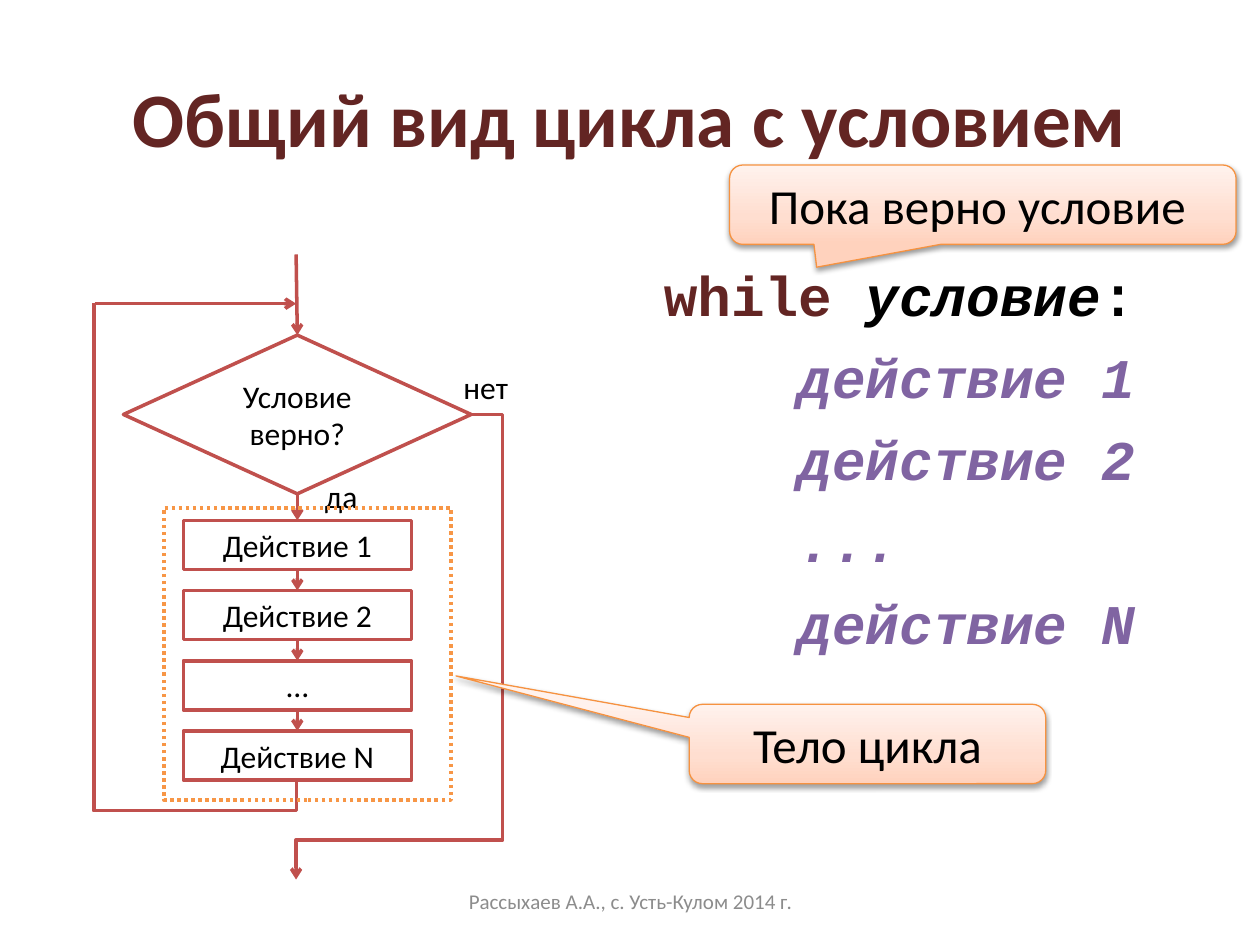
"""Builds a slide that explains the general form of a while loop."""
from lxml import etree
from pptx import Presentation
from pptx.dml.color import RGBColor
from pptx.enum import dml, shapes, text
from pptx.oxml.ns import qn
from pptx.util import Inches, Pt

COLORS = {
    "maroon": "632523", "red": "C0504D", "orange": "F79646", "edge": "F69240",
    "purple": "8064A2", "gray": "8C8C8C", "black": "000000", "white": "FFFFFF",
}
GRADIENT = [(0, "FFD2BD"), (35, "FFDED0"), (100, "FFF2ED")]
SHAPE = shapes.MSO_SHAPE
CENTER = text.PP_ALIGN.CENTER
MIDDLE = text.MSO_ANCHOR.MIDDLE

TITLE = "Общий вид цикла с условием"
FOOTER = "Рассыхаев А.А., с. Усть-Кулом 2014 г."
QUESTION = "Условие верно?"
ACTIONS = ["Действие 1", "Действие 2", "…", "Действие N"]
BRANCHES = [("да", 2.48, 3.74), ("нет", 3.58, 2.87)]
CODE_HEAD = [("while ", "maroon", False), ("условие", "black", True), (":", "black", False)]
CODE_BODY = ["действие 1", "действие 2", "...", "действие N"]
CALLOUTS = [
    ("Пока верно условие ", (5.79, 1.31, 4.02, 0.63), (-0.328, 0.788, 0.167)),
    ("Тело цикла", (5.47, 5.59, 2.83, 0.63), (-1.154, -0.858, 0.167)),
]

AXIS, ACTION_TOP, ACTION_STEP = 2.36, 4.13, 0.557
ACTION_WIDTH, ACTION_HEIGHT = 1.81, 0.39
CODE_INDENT = 1.07


def color(name):
    return RGBColor.from_string(COLORS[name])


def add_node(parent, tag, **attributes):
    node = etree.SubElement(parent, qn(tag))
    for key, value in attributes.items():
        node.set(key, str(value))
    return node


def add_span(para, words, size, ink="black", font="Calibri", bold=False, italic=False):
    span = para.add_run()
    span.text = words
    span.font.size = Pt(size)
    span.font.name = font
    span.font.bold = bold
    span.font.italic = italic
    span.font.color.rgb = color(ink)


def add_text(page, place, anchor=text.MSO_ANCHOR.TOP):
    frame = page.shapes.add_textbox(*map(Inches, place)).text_frame
    frame.word_wrap = True
    frame.vertical_anchor = anchor
    return frame


def add_centered(frame, words, size, **style):
    frame.vertical_anchor = MIDDLE
    para = frame.paragraphs[0]
    para.alignment = CENTER
    add_span(para, words, size, **style)


def add_box(page, kind, place, edge="red", width=2):
    box = page.shapes.add_shape(kind, *map(Inches, place))
    box.shadow.inherit = False
    box.line.color.rgb = color(edge)
    box.line.width = Pt(width)
    return box


def add_step(page, kind, place, words):
    box = add_box(page, kind, place)
    box.fill.solid()
    box.fill.fore_color.rgb = color("white")
    add_centered(box.text_frame, words, 18)


def add_link(page, begin, end, arrow=True, bend=None, adjust=(), turn=0):
    kind = shapes.MSO_CONNECTOR.ELBOW if bend else shapes.MSO_CONNECTOR.STRAIGHT
    link = page.shapes.add_connector(kind, *map(Inches, begin + end))
    link.line.color.rgb = color("red")
    link.line.width = Pt(2)
    properties = link._element.spPr
    if arrow:
        add_node(properties.find(qn("a:ln")), "a:tailEnd", type="arrow")
    add_node(properties, "a:effectLst")
    if bend:
        geometry = properties.find(qn("a:prstGeom"))
        geometry.set("prst", bend)
        guides = geometry.find(qn("a:avLst"))
        for number, share in enumerate(adjust, 1):
            add_node(guides, "a:gd", name=f"adj{number}", fmla=f"val {round(share * 100000)}")
    if turn:
        properties.find(qn("a:xfrm")).set("rot", str(turn * 60000))


def add_callout(page, words, place, adjust):
    box = add_box(page, SHAPE.ROUNDED_RECTANGULAR_CALLOUT, place, "edge", 0.75)
    for number, value in enumerate(adjust):
        box.adjustments[number] = value
    properties = box._element.spPr
    gradient = etree.Element(qn("a:gradFill"), rotWithShape="1")
    stops = add_node(gradient, "a:gsLst")
    for position, tint in GRADIENT:
        add_node(add_node(stops, "a:gs", pos=position * 1000), "a:srgbClr", val=tint)
    add_node(gradient, "a:lin", ang=270 * 60000, scaled=0)
    properties.find(qn("a:ln")).addprevious(gradient)
    shadow = add_node(properties.find(qn("a:effectLst")), "a:outerShdw", blurRad=Pt(3.1),
                      dist=Pt(1.6), dir=90 * 60000, rotWithShape=0)
    add_node(add_node(shadow, "a:srgbClr", val=COLORS["black"]), "a:alpha", val=38000)
    add_centered(box.text_frame, words, 28)


def add_flowchart(page):
    add_step(page, SHAPE.FLOWCHART_DECISION, (0.98, 2.66, 2.76, 1.26), QUESTION)
    above = 3.92
    for number, words in enumerate(ACTIONS):
        top = ACTION_TOP + number * ACTION_STEP
        place = (AXIS - ACTION_WIDTH / 2, top, ACTION_WIDTH, ACTION_HEIGHT)
        add_step(page, SHAPE.FLOWCHART_PROCESS, place, words)
        add_link(page, (AXIS, above), (AXIS, top))
        above = top + ACTION_HEIGHT
    add_link(page, (3.44, 3.49), (-0.34, 5.1), False, "bentConnector3", (-0.066,), 90)
    add_link(page, (2.35, 2.02), (AXIS, 2.66))
    add_link(page, (0.75, 2.41), (2.35, 2.41))
    add_link(page, (3.74, 3.29), (2.35, 6.98), True, "bentConnector4", (-0.18, 0.915))
    for words, left, top in BRANCHES:
        frame = add_text(page, (left, top, 0.87, 0.4))
        add_span(frame.paragraphs[0], words, 18)


def add_code(page):
    frame = add_text(page, (5.17, 2.02, 4.02, 3.22))
    head = frame.paragraphs[0]
    head.space_before = Pt(8.4)
    for words, ink, italic in CODE_HEAD:
        add_span(head, words, 32, ink, "Courier New", True, italic)
    for words in CODE_BODY:
        para = frame.add_paragraph()
        para.space_before = Pt(8.4)
        para._p.get_or_add_pPr().set("marL", str(Inches(CODE_INDENT)))
        add_span(para, words, 32, "purple", "Courier New", True, True)


def main():
    deck = Presentation()
    deck.slide_width, deck.slide_height = Inches(10), Inches(7.5)
    page = deck.slides.add_slide(deck.slide_layouts[6])
    add_centered(add_text(page, (0.5, 0.3, 9, 1.25)), TITLE, 44, ink="maroon", bold=True)
    add_centered(add_text(page, (3.42, 6.95, 3.17, 0.4)), FOOTER, 12, ink="gray")
    add_flowchart(page)
    add_code(page)
    for callout in CALLOUTS:
        add_callout(page, *callout)
    body = add_box(page, SHAPE.RECTANGLE, (1.3, 4.03, 2.28, 2.32), "orange")
    body.fill.background()
    body.line.dash_style = dml.MSO_LINE.ROUND_DOT
    deck.save("out.pptx")


if __name__ == "__main__":
    main()
